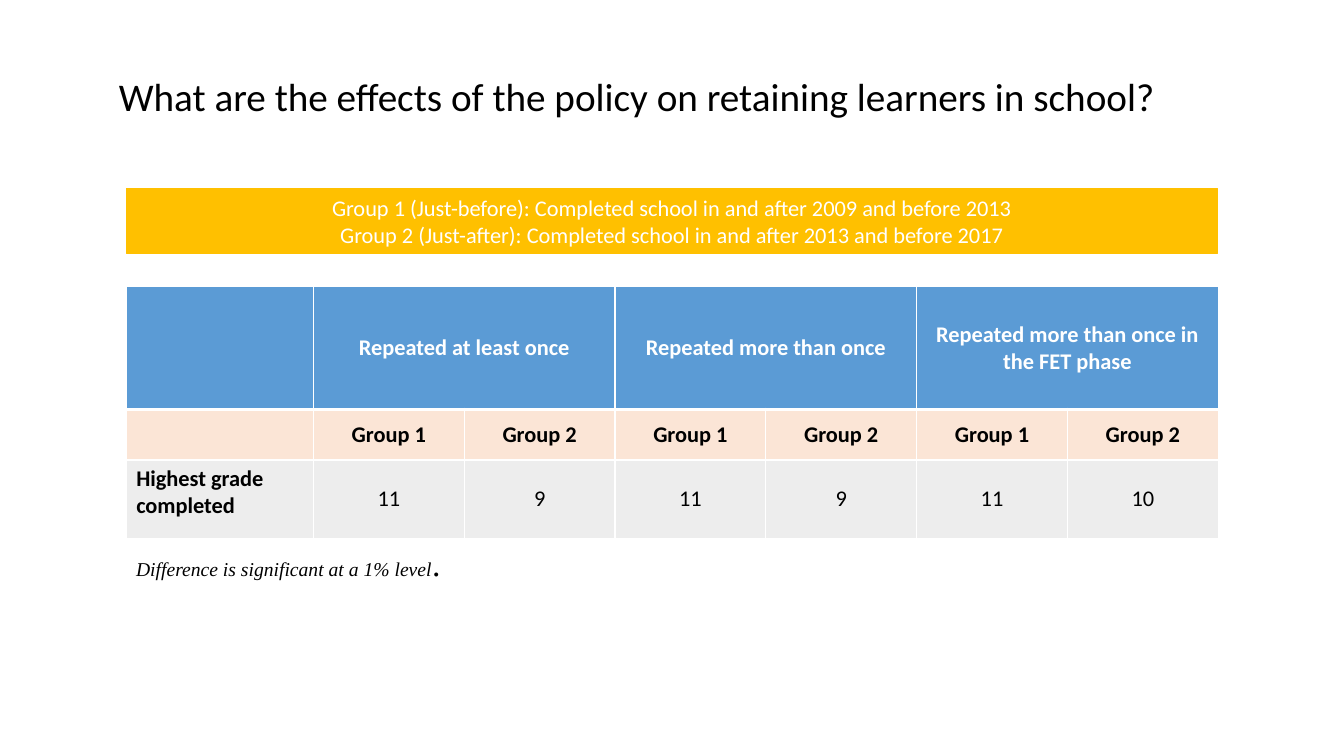
from dataclasses import dataclass

from lxml.etree import SubElement
from pptx import Presentation
from pptx.dml.color import RGBColor as RGB
from pptx.enum.shapes import MSO_SHAPE as Shape
from pptx.enum.text import MSO_ANCHOR as Anchor, MSO_AUTO_SIZE as AutoSize, PP_ALIGN as Align
from pptx.oxml.ns import qn
from pptx.util import Cm, Pt


@dataclass(frozen=True)
class Theme:
    white: str = "FFFFFF"
    black: str = "000000"
    banner: str = "FFC000"
    header: str = "5B9BD5"
    groups: str = "FBE5D6"
    grades: str = "EDEDED"
    sans: str = "Calibri"
    serif: str = "Times New Roman"
    title: int = 28
    body: int = 16
    note: int = 14
    stop: int = 24


def assign(target, values):
    for name, value in values.items():
        setattr(target, name, value)


class SlideBuilder:
    def __init__(self, slide, theme):
        self.slide = slide
        self.theme = theme

    def add_words(self, paragraph, words, size, color, align=Align.LEFT, **font):
        paragraph.alignment = align
        run = paragraph.add_run()
        run.text = words
        assign(run.font, {"name": self.theme.sans, "size": Pt(size), **font})
        run.font.color.rgb = RGB.from_string(color)

    def paint(self, fill, color):
        fill.solid()
        fill.fore_color.rgb = RGB.from_string(color)

    def title(self, words, left, top, width, height):
        heading = self.slide.shapes.title
        assign(heading, {"left": Cm(left), "top": Cm(top), "width": Cm(width), "height": Cm(height)})
        heading.text_frame.vertical_anchor = Anchor.MIDDLE
        paragraph = heading.text_frame.paragraphs[0]
        paragraph.line_spacing = 0.9
        self.add_words(paragraph, words, self.theme.title, self.theme.black)

    def banner(self, lines, left, top, width, height):
        band = self.slide.shapes.add_shape(Shape.RECTANGLE, Cm(left), Cm(top), Cm(width), Cm(height))
        band.shadow.inherit = False
        self.paint(band.fill, self.theme.banner)
        self.paint(band.line.fill, self.theme.banner)
        band.line.width = Pt(0.75)
        frame = band.text_frame
        assign(frame, {"word_wrap": True, "auto_size": AutoSize.SHAPE_TO_FIT_TEXT})
        for index, line in enumerate(lines):
            paragraph = frame.add_paragraph() if index else frame.paragraphs[0]
            self.add_words(paragraph, line, self.theme.body, self.theme.white, Align.CENTER)

    def borders(self, cell, widths):
        properties = cell._tc.get_or_add_tcPr()
        for index, (side, width) in enumerate(widths.items()):
            edge = SubElement(properties, qn(f"a:ln{side}"), w=str(Pt(width)))
            solid = SubElement(edge, qn("a:solidFill"))
            SubElement(solid, qn("a:srgbClr"), val=self.theme.white)
            properties.insert(index, edge)

    def table(self, rows, fills, left, top, widths, heights):
        grid = self.slide.shapes.add_table(
            len(rows), len(widths), Cm(left), Cm(top), Cm(sum(widths)), Cm(sum(heights))
        ).table
        for column, width in zip(grid.columns, widths):
            column.width = Cm(width)
        for row, height in zip(grid.rows, heights):
            row.height = Cm(height)
        for r, (texts, fill) in enumerate(zip(rows, fills)):
            for c, words in enumerate(texts):
                cell = grid.cell(r, c)
                self.paint(cell.fill, fill)
                self.borders(cell, {"L": 1, "R": 1, "T": 3 if r == 1 else 1, "B": 3 if r == 0 else 1})
                if not words:
                    continue
                row_label = c == 0
                cell.vertical_anchor = Anchor.TOP if row_label else Anchor.MIDDLE
                self.add_words(
                    cell.text_frame.paragraphs[0], words, self.theme.body,
                    self.theme.white if r == 0 else self.theme.black,
                    Align.LEFT if row_label else Align.CENTER,
                    bold=r < 2 or row_label,
                )
        for c in range(1, len(widths), 2):
            grid.cell(0, c).merge(grid.cell(0, c + 1))

    def footnote(self, words, stop, left, top, width, height):
        frame = self.slide.shapes.add_textbox(Cm(left), Cm(top), Cm(width), Cm(height)).text_frame
        assign(frame, {"word_wrap": True, "auto_size": AutoSize.SHAPE_TO_FIT_TEXT})
        for text, size, italic in ((words, self.theme.note, True), (stop, self.theme.stop, False)):
            self.add_words(frame.paragraphs[0], text, size, self.theme.black,
                           name=self.theme.serif, italic=italic)


def main():
    deck = Presentation()
    assign(deck, {"slide_width": Cm(33.87), "slide_height": Cm(19.05)})
    theme = Theme()
    page = SlideBuilder(deck.slides.add_slide(deck.slide_layouts[5]), theme)

    page.title("What are the effects of the policy on retaining learners in school?",
               2.74, 0.66, 26.87, 3.68)
    page.banner(
        ["Group 1 (Just-before): Completed school in and after 2009 and before 2013",
         "Group 2 (Just-after): Completed school in and after 2013 and before 2017"],
        3.18, 4.75, 27.51, 1.63,
    )
    repetition = [
        "", "Repeated at least once", "", "Repeated more than once", "",
        "Repeated more than once in the FET phase", "",
    ]
    groups = [""] + ["Group 1", "Group 2"] * 3
    grades = ["Highest grade completed", "11", "9", "11", "9", "11", "10"]
    page.table(
        [repetition, groups, grades], [theme.header, theme.groups, theme.grades],
        3.18, 7.22, [4.72] + [3.8] * 6, [3.1, 1.27, 1.98],
    )
    page.footnote("Difference is significant at a 1% level", ".", 3.18, 13.56, 25.76, 1.27)
    deck.save("out.pptx")


if __name__ == "__main__":
    main()
